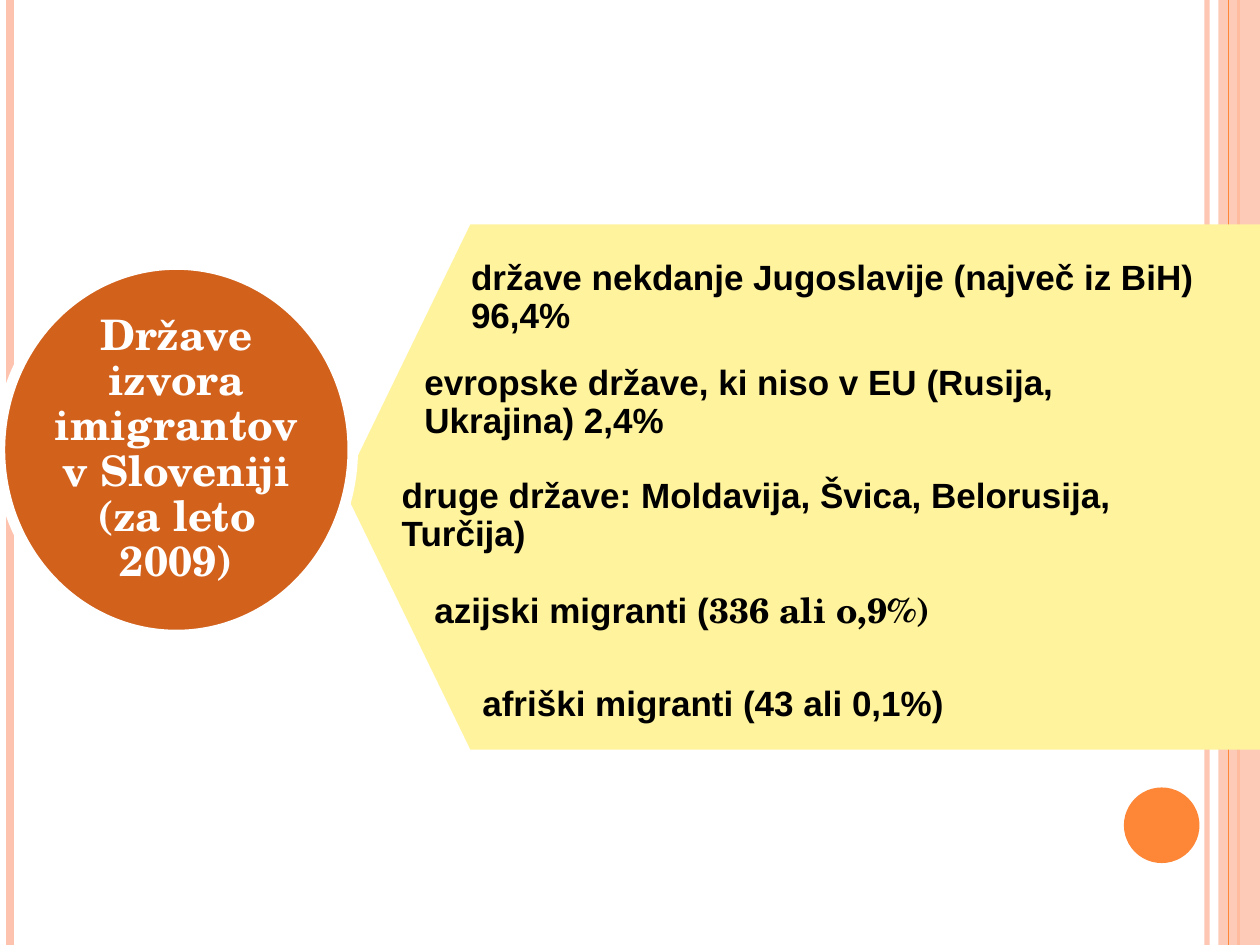
import pptx
import pptx.util
import pptx.dml.color
import pptx.enum.shapes
import pptx.enum.text
import pptx.oxml
import pptx.oxml.ns
import lxml.etree

SLIDE_WIDTH, SLIDE_HEIGHT = 10, 7.5
PEACH, ORANGE, RUST, YELLOW = "FEC3AE", "FE8637", "D2611C", "FFF39D"
WHITE, BLACK = "FFFFFF", "000000"
SERIF, SANS = "TeX Gyre Schola", "Arial"

SHAPES = pptx.enum.shapes.MSO_SHAPE
inches = pptx.util.Inches

# Left offset and top of each entry inside the arrow, then its (text, font) runs
ENTRIES = [
    (0.92, 0.24, [("države nekdanje Jugoslavije (največ iz BiH) 96,4%", SANS)]),
    (0.55, 1.07, [("evropske države, ki niso v EU (Rusija, Ukrajina) 2,4%", SANS)]),
    (0.37, 1.97, [("druge države: Moldavija, Švica, Belorusija, Turčija)", SANS)]),
    (0.63, 2.88, [("azijski migranti (", SANS), ("336 ali o,9%)", SERIF)]),
    (1.01, 3.62, [("afriški migranti (43 ali 0,1%)", SANS)]),
]


def color(hex_string):
    return pptx.dml.color.RGBColor.from_string(hex_string)


def set_opacity(element, percent):
    fill_color = next(element.iter(pptx.oxml.ns.qn("a:srgbClr")))
    alpha = lxml.etree.SubElement(fill_color, pptx.oxml.ns.qn("a:alpha"))
    alpha.set("val", str(percent * 1000))


def add_filled_shape(slide, kind, box, fill):
    shape = slide.shapes.add_shape(kind, *map(inches, box))
    shape.shadow.inherit = False
    shape.fill.solid()
    shape.fill.fore_color.rgb = color(fill)
    shape.line.fill.background()
    return shape


def add_vertical_rule(slide, x, hex_string, width, opacity=100):
    rule = slide.shapes.add_connector(
        pptx.enum.shapes.MSO_CONNECTOR.STRAIGHT,
        inches(x), 0, inches(x), inches(SLIDE_HEIGHT))
    rule.line.color.rgb = color(hex_string)
    rule.line.width = pptx.util.Pt(width)
    properties = rule._element.spPr
    lxml.etree.SubElement(properties, pptx.oxml.ns.qn("a:effectLst"))
    if opacity < 100:
        set_opacity(properties, opacity)


def write_runs(paragraph, runs, size, hex_string):
    paragraph.line_spacing = 0.9
    for text, font_name in runs:
        run = paragraph.add_run()
        run.text = text
        run.font.name = font_name
        run.font.size = pptx.util.Pt(size)
        run.font.bold = True
        run.font.color.rgb = color(hex_string)


def add_frame(slide):
    """Draw the bands along both edges and the corner dot."""
    add_vertical_rule(slide, 9.58, PEACH, 3, 93)
    add_vertical_rule(slide, 0.08, PEACH, 4.5)
    add_vertical_rule(slide, 9.83, ORANGE, 1.5)
    band = add_filled_shape(
        slide, SHAPES.RECTANGLE, (9.67, 0, SLIDE_WIDTH - 9.67, SLIDE_HEIGHT), PEACH)
    set_opacity(band._element.spPr, 87)
    add_vertical_rule(slide, 9.75, ORANGE, 0.75)
    add_filled_shape(slide, SHAPES.OVAL, (8.92, 6.25, 0.6, 0.6), ORANGE)


def add_entry_arrow(slide, box, entries):
    left, top, width, height = box
    arrow = add_filled_shape(slide, SHAPES.PENTAGON, box, YELLOW)
    arrow.rotation = 180
    arrow.adjustments[0] = 0.243
    for offset, drop, runs in entries:
        text_box = slide.shapes.add_textbox(
            inches(left + offset), inches(top + drop), inches(6.24), inches(0.63))
        text_box.text_frame.word_wrap = True
        write_runs(text_box.text_frame.paragraphs[0], runs, 20, BLACK)


def add_title_circle(slide, box, title):
    circle = add_filled_shape(slide, SHAPES.OVAL, box, RUST)
    circle.line.color.rgb = color(WHITE)
    circle.line.width = pptx.util.Pt(6)
    frame = circle.text_frame
    frame.word_wrap = True
    frame.vertical_anchor = pptx.enum.text.MSO_ANCHOR.MIDDLE
    frame.margin_left = frame.margin_right = 0
    frame.margin_top = frame.margin_bottom = 0
    paragraph = frame.paragraphs[0]
    paragraph.alignment = pptx.enum.text.PP_ALIGN.CENTER
    write_runs(paragraph, [(title, SERIF)], 24, WHITE)


def main():
    presentation = pptx.Presentation()
    presentation.slide_width = inches(SLIDE_WIDTH)
    presentation.slide_height = inches(SLIDE_HEIGHT)
    slide = presentation.slides.add_slide(presentation.slide_layouts[6])
    add_frame(slide)
    add_entry_arrow(slide, (2.72, 1.78, 7.28, 4.17), ENTRIES)
    add_title_circle(slide, (0, 2.1, 2.8, 2.94),
                     "Države izvora imigrantov v Sloveniji (za leto 2009)")
    presentation.save("out.pptx")


if __name__ == "__main__":
    main()
